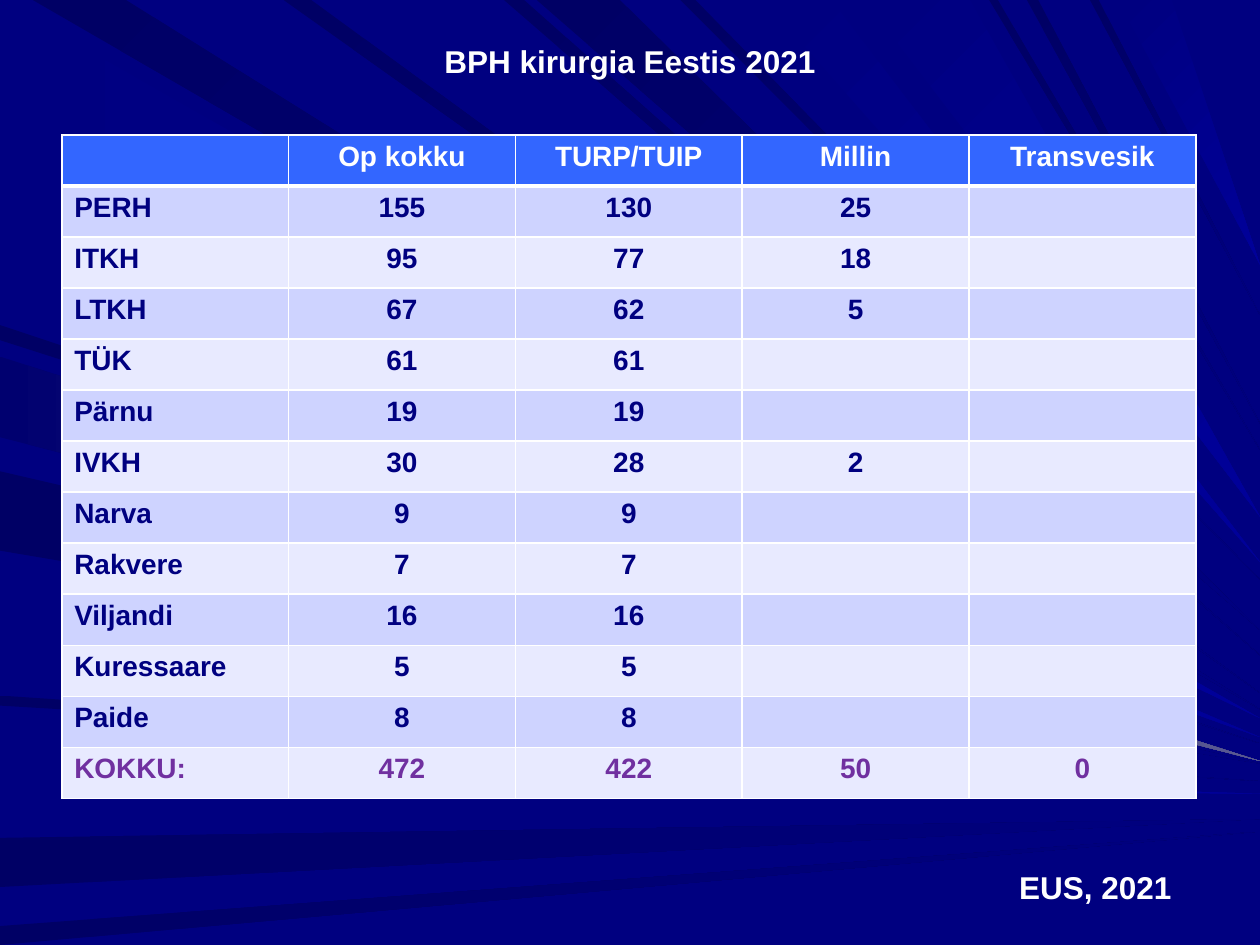
import pptx
import pptx.util
import pptx.dml.color
import pptx.enum.text
import pptx.oxml
import pptx.oxml.ns

Inches, Pt = pptx.util.Inches, pptx.util.Pt
ALIGN = pptx.enum.text.PP_ALIGN

# Content
TITLE = "BPH kirurgia Eestis 2021"
SOURCE = "EUS, 2021"
OPERATIONS = [
    ("", "Op kokku", "TURP/TUIP", "Millin", "Transvesik"),
    ("PERH", "155", "130", "25", ""),
    ("ITKH", "95", "77", "18", ""),
    ("LTKH", "67", "62", "5", ""),
    ("TÜK", "61", "61", "", ""),
    ("Pärnu", "19", "19", "", ""),
    ("IVKH", "30", "28", "2", ""),
    ("Narva", "9", "9", "", ""),
    ("Rakvere", "7", "7", "", ""),
    ("Viljandi", "16", "16", "", ""),
    ("Kuressaare", "5", "5", "", ""),
    ("Paide", "8", "8", "", ""),
    ("KOKKU:", "472", "422", "50", "0"),
]

THEME = {
    "font": "Arial", "heading_size": 18, "table_size": 16,
    "navy": "000080", "white": "FFFFFF", "header": "3366FF",
    "bands": ("CED3FF", "E8EAFF"), "total": "7030A0",
    "border": 1, "header_border": 3,
    "tones": {"dark": ("000065", "000080"), "glow": ("000080", "000099"),
              "pale": ("00006F", "5A5A92")},
}

# Background rays: each starts as a span on one slide edge
# and narrows to a tip at some height on the right edge
WIDTH, HEIGHT = 10, 7.5
RAYS = [
    ("left", "glow", [(0, 0.9, 5.7), (1.6, 2.3, 5.85), (6, 6.2, 6.3)]),
    ("top", "dark", [(0.26, 1, 5.63)]),
    ("left", "dark", [(2.58, 2.7, 5.9), (3.74, 4.37, 6.06), (5.52, 5.6, 6.2),
                      (6.65, 7.04, 6.5), (7.35, 7.5, 6.6)]),
    ("top", "glow", [(6.06, 6.6, 4.46), (6.86, 7.7, 4.1), (8.87, 9.3, 2.1)]),
    ("top", "dark", [(2.25, 2.47, 5.5), (4, 4.16, 5.2), (4.26, 4.92, 5),
                     (5.4, 5.52, 4.6), (7.85, 7.92, 3.57), (8.15, 8.24, 3.36),
                     (8.65, 8.72, 2.5)]),
    ("left", "pale", [(2.83, 3.47, 6.04)]),
]


def rgb(value):
    return pptx.dml.color.RGBColor.from_string(value)


def paint(fill, color):
    fill.solid()
    fill.fore_color.rgb = rgb(color)


def write(frame, text, size, color, align):
    frame.text = text
    paragraph = frame.paragraphs[0]
    paragraph.alignment = align
    font = paragraph.font
    font.name, font.size, font.bold = THEME["font"], Pt(size), True
    font.color.rgb = rgb(color)


def add_ray(shapes, edge, tone, start, end, tip):
    base = [(0, start), (0, end)] if edge == "left" else [(start, 0), (end, 0)]
    first, *others = [(Inches(x), Inches(y)) for x, y in base + [(WIDTH, tip)]]
    builder = shapes.build_freeform(*first)
    builder.add_line_segments(others, close=True)
    ray = builder.convert_to_shape()
    ray.shadow.inherit = False
    ray.line.fill.background()
    ray.fill.gradient()
    ray.fill.gradient_angle = 0 if edge == "left" else -45 % 360
    for stop, color in zip(ray.fill.gradient_stops, THEME["tones"][tone]):
        stop.color.rgb = rgb(color)


def set_borders(cell, top, bottom):
    properties = cell._tc.get_or_add_tcPr()
    widths = {"L": THEME["border"], "R": THEME["border"], "T": top, "B": bottom}
    for index, (side, width) in enumerate(widths.items()):
        properties.insert(index, pptx.oxml.parse_xml(
            f'<a:ln{side} {pptx.oxml.ns.nsdecls("a")} w="{Pt(width)}"><a:solidFill>'
            f'<a:srgbClr val="{THEME["white"]}"/></a:solidFill></a:ln{side}>'))


def add_operations(shapes):
    row_count, column_count = len(OPERATIONS), len(OPERATIONS[0])
    table = shapes.add_table(row_count, column_count, Inches(0.49), Inches(1.07),
                             Inches(9), Inches(5.27)).table
    thin, thick = THEME["border"], THEME["header_border"]
    for r, values in enumerate(OPERATIONS):
        if r == 0:
            fill, color = THEME["header"], THEME["white"]
        else:
            fill = THEME["bands"][(r - 1) % 2]
            color = THEME["total"] if r == row_count - 1 else THEME["navy"]
        for c, value in enumerate(values):
            cell = table.cell(r, c)
            paint(cell.fill, fill)
            write(cell.text_frame, value, THEME["table_size"], color,
                  ALIGN.CENTER if r == 0 or c else ALIGN.LEFT)
            set_borders(cell, thick if r == 1 else thin, thick if r == 0 else thin)


def main():
    deck = pptx.Presentation()
    deck.slide_width, deck.slide_height = Inches(WIDTH), Inches(HEIGHT)
    slide = deck.slides.add_slide(deck.slide_layouts[5])
    shapes = slide.shapes

    # Background
    paint(slide.background.fill, THEME["navy"])
    for edge, tone, spans in RAYS:
        for span in spans:
            add_ray(shapes, edge, tone, *span)

    # Title, raised above the rays
    title = shapes.title
    title.element.getparent().append(title.element)
    title.left, title.top = Inches(0.5), Inches(0.13)
    title.width, title.height = Inches(9), Inches(0.71)
    title.text_frame.vertical_anchor = pptx.enum.text.MSO_ANCHOR.MIDDLE
    write(title.text_frame, TITLE, THEME["heading_size"], THEME["white"], ALIGN.CENTER)

    # Table and source
    add_operations(shapes)
    source = shapes.add_textbox(Inches(7.99), Inches(6.84), Inches(1.49), Inches(0.4))
    source.text_frame.word_wrap = True
    write(source.text_frame, SOURCE, THEME["heading_size"], THEME["white"], ALIGN.LEFT)

    deck.save("out.pptx")


if __name__ == "__main__":
    main()
